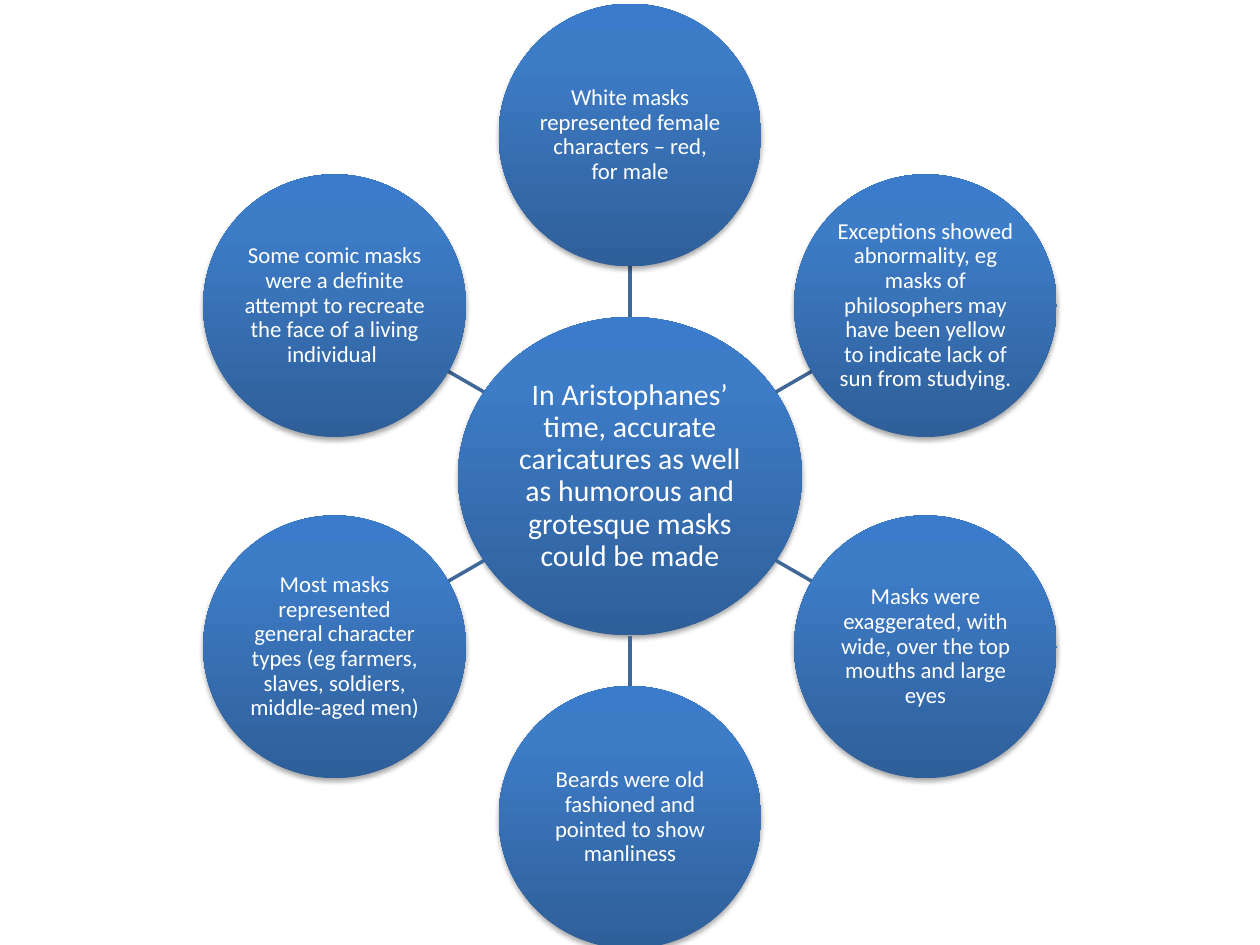
from copy import deepcopy
from math import cos, hypot, radians, sin

from lxml import etree
from pptx import Presentation
from pptx.dml.color import RGBColor
from pptx.enum.shapes import MSO_CONNECTOR, MSO_SHAPE
from pptx.enum.text import MSO_ANCHOR, PP_ALIGN
from pptx.oxml.ns import qn
from pptx.util import Inches, Pt

LINE, OVAL = MSO_CONNECTOR.STRAIGHT, MSO_SHAPE.OVAL
MIDDLE, CENTER = MSO_ANCHOR.MIDDLE, PP_ALIGN.CENTER

WIDE, HIGH = 10, 7.5
COLORS = {"low": "2F5F99", "mid": "3D7CC7", "top": "3A7CCB",
          "spoke": "3F6797", "text": "FFFFFF", "shadow": "000000"}
SHADES = [(0, "low"), (0.8, "mid"), (1, "top")]

HUB = "In Aristophanes’ time, accurate caricatures as well as humorous and grotesque masks could be made"
FACTS = [  # clockwise from the top
    "White masks represented female characters – red, for male",
    "Exceptions showed abnormality, eg masks of philosophers may have been yellow "
    "to indicate lack of sun from studying.",
    "Masks were exaggerated, with wide, over the top mouths and large eyes",
    "Beards were old fashioned and pointed to show manliness",
    "Most masks represented general character types (eg farmers, slaves, soldiers, middle-aged men)",
    "Some comic masks were a definite attempt to recreate the face of a living individual ",
]


def color(name):
    return RGBColor.from_string(COLORS[name])


def shade(disc):
    """Fill a disc from dark at the foot to light at the top."""
    disc.fill.gradient()
    disc.fill.gradient_angle = 90
    stops = disc._element.spPr.find(qn("a:gradFill")).find(qn("a:gsLst"))
    stops.append(deepcopy(stops[-1]))
    for stop, (place, name) in zip(disc.fill.gradient_stops, SHADES):
        stop.position = place
        stop.color.rgb = color(name)


def drop(disc):
    """Cast a soft shadow straight down."""
    disc.shadow.inherit = False
    effects = disc._element.spPr.find(qn("a:effectLst"))
    cast = etree.SubElement(effects, qn("a:outerShdw"), blurRad=str(Pt(3.1)),
                            dist=str(Pt(1.8)), dir="5400000", rotWithShape="0")
    tint = etree.SubElement(cast, qn("a:srgbClr"), val=COLORS["shadow"])
    etree.SubElement(tint, qn("a:alpha"), val="35000")


def add_disc(slide, x, y, width, height, text, size):
    """Place a disc with its centre at x, y."""
    disc = slide.shapes.add_shape(OVAL, Inches(x - width / 2), Inches(y - height / 2),
                                  Inches(width), Inches(height))
    shade(disc)
    disc.line.fill.background()
    drop(disc)
    frame = disc.text_frame
    frame.word_wrap = True
    frame.vertical_anchor = MIDDLE
    frame.margin_left = frame.margin_right = Inches(0.01)
    frame.margin_top = frame.margin_bottom = Inches(0.01)
    para = frame.paragraphs[0]
    para.text = text
    para.alignment = CENTER
    para.line_spacing = 0.9
    para.font.name = "Calibri"
    para.font.size = Pt(size)
    para.font.color.rgb = color("text")


def add_spoke(slide, start, end):
    spoke = slide.shapes.add_connector(LINE, *(Inches(n) for n in start + end))
    spoke.line.color.rgb = color("spoke")
    spoke.line.width = Pt(2)
    etree.SubElement(spoke._element.spPr, qn("a:effectLst"))


def add_wheel(slide, left, top, width, height):
    """Draw the hub, and the facts evenly spaced on a ring around it."""
    x, y = left + width / 2, top + height / 2
    size = height * 0.278
    ring = (height - size) / 2
    wide, high = height * 0.364, height * 0.337
    add_disc(slide, x, y, wide, high, HUB, 17)
    for i, fact in enumerate(FACTS):
        angle = radians(360 * i / len(FACTS) - 90)
        dx, dy = cos(angle), sin(angle)
        near = 1 / hypot(dx / (wide / 2), dy / (high / 2))
        far = ring - size / 2
        add_spoke(slide, (x + near * dx, y + near * dy), (x + far * dx, y + far * dy))
        add_disc(slide, x + ring * dx, y + ring * dy, size, size, fact, 13)


def main():
    deck = Presentation()
    deck.slide_width, deck.slide_height = Inches(WIDE), Inches(HIGH)
    slide = deck.slides.add_slide(deck.slide_layouts[6])
    add_wheel(slide, 0, HIGH * 0.004, WIDE, HIGH)
    deck.save("out.pptx")


if __name__ == "__main__":
    main()
